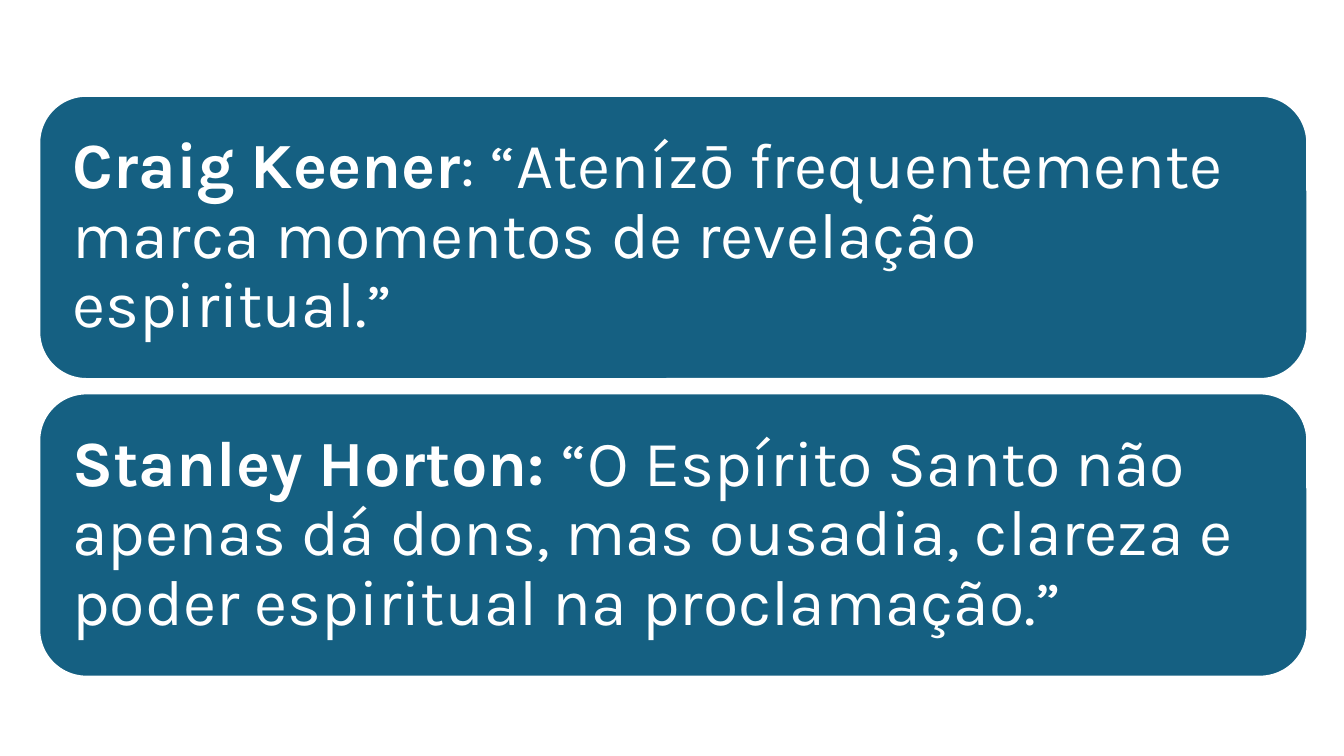
from pptx import Presentation
from pptx.dml.color import RGBColor as RGB
from pptx.enum.shapes import MSO_SHAPE as Shape
from pptx.enum.text import MSO_ANCHOR as Anchor, PP_ALIGN as Align
from pptx.util import Pt

BLUE = RGB(0x15, 0x60, 0x82)
WHITE = RGB(0xFF, 0xFF, 0xFF)

# Card grid, in points
LEFT, TOP = 28, 68.4
WIDE, HIGH = 905.8, 202.4
STEP = 212.6

QUOTES = [
    ("Craig Keener",
     ": “Atenízō frequentemente marca momentos de revelação espiritual.”"),
    ("Stanley Horton: ",
     "“O Espírito Santo não apenas dá dons, mas ousadia, clareza e "
     "poder espiritual na proclamação.”"),
]


def apply(item, form):
    for name, value in form.items():
        setattr(item, name, value)


class Deck:
    """Holds the style and the current slide."""
    font = {"name": "Karla", "size": Pt(46)}
    frame = {"word_wrap": True, "vertical_anchor": Anchor.MIDDLE,
             **{f"margin_{side}": Pt(13.8)
                for side in ("left", "top", "right", "bottom")}}
    para = {"alignment": Align.LEFT, "line_spacing": 0.9}

    def __init__(self, slide):
        self.slide = slide

    def card(self, top, name, quote):
        box = self.slide.shapes.add_shape(
            Shape.ROUNDED_RECTANGLE, Pt(LEFT), Pt(top), Pt(WIDE), Pt(HIGH))
        box.shadow.inherit = False
        box.fill.solid()
        box.fill.fore_color.rgb = BLUE
        box.line.color.rgb = WHITE
        box.line.width = Pt(1.5)
        apply(box.text_frame, self.frame)
        para = box.text_frame.paragraphs[0]
        apply(para, self.para)
        self.run(para, name, True)
        self.run(para, quote, False)

    def run(self, para, text, bold):
        run = para.add_run()
        run.text = text
        apply(run.font, {**self.font, "bold": bold})
        run.font.color.rgb = WHITE


def main():
    show = Presentation()
    show.slide_width, show.slide_height = Pt(960), Pt(540)
    deck = Deck(show.slides.add_slide(show.slide_layouts[6]))

    # One card per quote
    for row, (name, quote) in enumerate(QUOTES):
        deck.card(TOP + row * STEP, name, quote)

    show.save("out.pptx")


if __name__ == "__main__":
    main()
